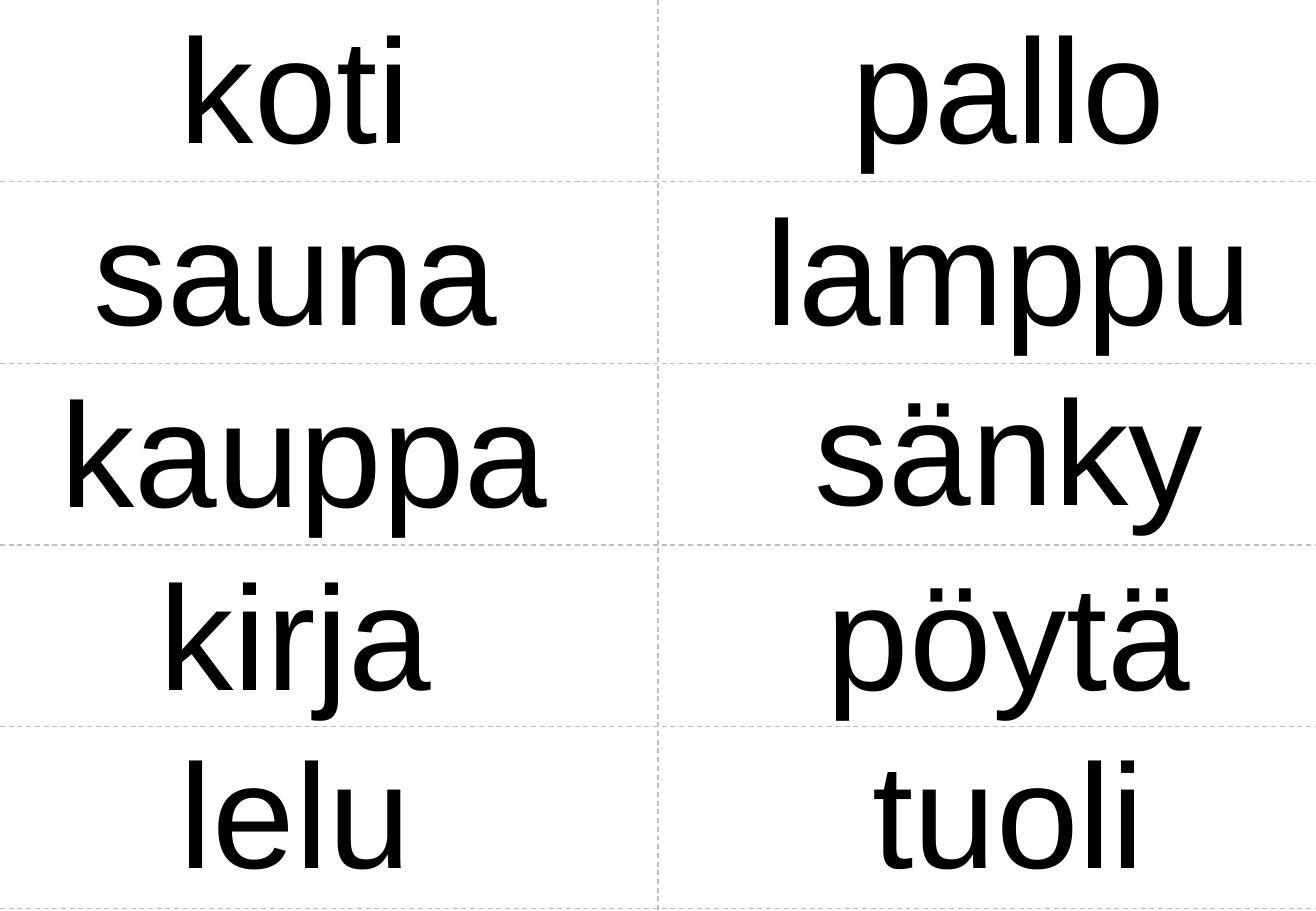
from lxml.etree import SubElement
from pptx import Presentation
from pptx.dml.color import RGBColor
from pptx.enum.dml import MSO_LINE
from pptx.enum.shapes import MSO_CONNECTOR
from pptx.enum.text import MSO_AUTO_SIZE, PP_ALIGN
from pptx.oxml.ns import qn
from pptx.util import Inches, Pt

WIDTH, HEIGHT = 10.83, 7.5
CARD_HEIGHT = 1.496
WORD_HEIGHT = 1.48
COLUMNS = [
    [("koti", 2.43, -0.09, 2.02), ("sauna", 2.43, 1.41, 3.44), ("kauppa", 2.5, 2.91, 4.12),
     ("kirja", 2.43, 4.41, 2.35), ("lelu", 2.43, 5.88, 2.02)],
    [("pallo", 8.3, -0.09, 2.7), ("lamppu", 8.3, 1.41, 4.12), ("sänky", 8.3, 2.89, 3.31),
     ("pöytä", 8.3, 4.41, 3.1), ("tuoli", 8.3, 5.88, 2.36)],
]


def color(value):
    return RGBColor.from_string(value)


class CardSheet:
    """Draws word cards and cutting lines on one slide."""

    font_name = "Arial"
    font_size = 88
    ink = "000000"
    cut_color = "BFBFBF"
    inset = 0.05

    def __init__(self, slide):
        self.slide = slide

    def word(self, text, center, top, width):
        box = self.slide.shapes.add_textbox(
            Inches(center - width / 2), Inches(top), Inches(width), Inches(WORD_HEIGHT))
        frame = box.text_frame
        frame.word_wrap = False
        frame.auto_size = MSO_AUTO_SIZE.SHAPE_TO_FIT_TEXT
        frame.margin_left = frame.margin_right = Inches(self.inset)
        frame.margin_top = frame.margin_bottom = Inches(self.inset)
        paragraph = frame.paragraphs[0]
        paragraph.text = text
        paragraph.alignment = PP_ALIGN.CENTER
        paragraph.font.name = self.font_name
        paragraph.font.size = Pt(self.font_size)
        paragraph.font.color.rgb = color(self.ink)

    def cut(self, x1, y1, x2, y2):
        cut = self.slide.shapes.add_connector(
            MSO_CONNECTOR.STRAIGHT, Inches(x1), Inches(y1), Inches(x2), Inches(y2))
        cut.line.color.rgb = color(self.cut_color)
        cut.line.width = Pt(0.75)
        cut.line.dash_style = MSO_LINE.DASH
        SubElement(cut._element.spPr, qn("a:effectLst"))


def main():
    deck = Presentation()
    deck.slide_width, deck.slide_height = Inches(WIDTH), Inches(HEIGHT)
    sheet = CardSheet(deck.slides.add_slide(deck.slide_layouts[6]))

    for column in COLUMNS:
        for entry in column:
            sheet.word(*entry)

    sheet.cut(WIDTH / 2, 0, WIDTH / 2, HEIGHT)
    for row in range(1, len(COLUMNS[0]) + 1):
        sheet.cut(0, row * CARD_HEIGHT, WIDTH, row * CARD_HEIGHT)

    deck.save("out.pptx")


if __name__ == "__main__":
    main()
